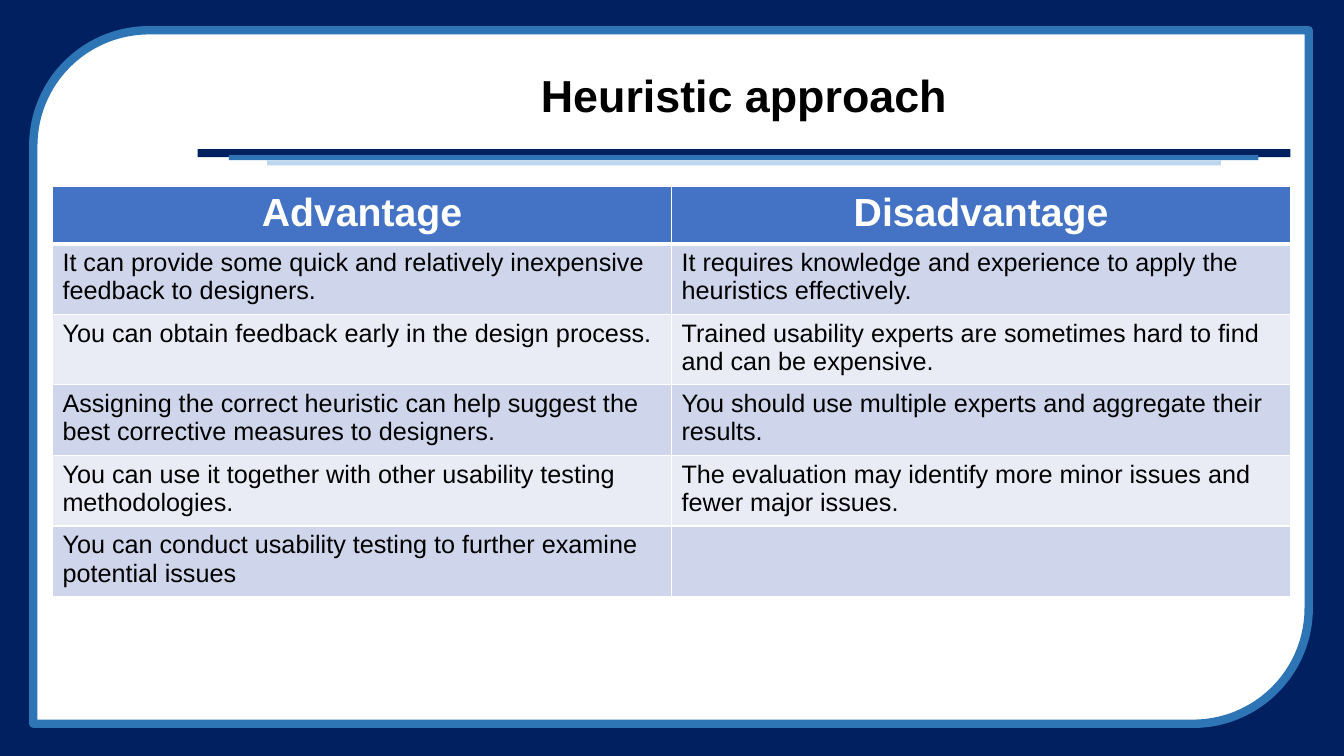
from typing import NamedTuple

from lxml import etree
from pptx import Presentation
from pptx import util as u
from pptx.dml.color import RGBColor
from pptx.enum import shapes, text
from pptx.oxml.ns import qn

NAVY, BLUE, PALE, WHITE, BLACK = "002060", "2E75B6", "BDD7EE", "FFFFFF", "000000"
HEADER_FILL, BANDS = "4472C4", ("CFD5EA", "E9EBF5")
HEADER_HEIGHT, ROW_HEIGHT, COLUMN_WIDTH = 0.53, 0.66, 6.14


class Panel(NamedTuple):
    left: float
    top: float
    width: float
    height: float
    fill: str
    kind: shapes.MSO_SHAPE = shapes.MSO_SHAPE.RECTANGLE
    line: str = ""
    rotation: int = 0


PANELS = [
    Panel(0, 0, 13.33, 7.5, NAVY),
    Panel(0.33, 0.3, 12.65, 6.88, WHITE, shapes.MSO_SHAPE.ROUND_2_DIAG_RECTANGLE, BLUE, 180),
    # Stripes under the title
    Panel(1.96, 1.48, 10.84, 0.08, NAVY),
    Panel(2.27, 1.54, 10.21, 0.05, BLUE),
    Panel(2.65, 1.59, 9.46, 0.05, PALE),
]

ROWS = [
    ("Advantage", "Disadvantage"),
    ("It can provide some quick and relatively inexpensive feedback to designers.",
     "It requires knowledge and experience to apply the heuristics effectively."),
    ("You can obtain feedback early in the design process.",
     "Trained usability experts are sometimes hard to find and can be expensive."),
    ("Assigning the correct heuristic can help suggest the best corrective measures to designers.",
     "You should use multiple experts and aggregate their results."),
    ("You can use it together with other usability testing methodologies.",
     "The evaluation may identify more minor issues and fewer major issues."),
    ("You can conduct usability testing to further examine potential issues", ""),
]

TITLE_FORMAT = {"name": "Arial", "size": u.Pt(32), "bold": True}
HEADER_FORMAT = {"name": "Arial", "size": u.Pt(28), "bold": True}
BODY_FORMAT = {"name": "Arial", "size": u.Pt(18), "bold": False}


def color(value: str) -> RGBColor:
    return RGBColor.from_string(value)


def draw_panel(page, panel: Panel) -> None:
    shape = page.shapes.add_shape(
        panel.kind, *map(u.Inches, (panel.left, panel.top, panel.width, panel.height)))
    shape.shadow.inherit = False
    shape.rotation = panel.rotation
    shape.fill.solid()
    shape.fill.fore_color.rgb = color(panel.fill)
    if panel.line:
        shape.line.color.rgb = color(panel.line)
        shape.line.width = u.Pt(6)
    else:
        shape.line.fill.background()


def write(para, words: str, formats: dict, ink: str, centered: bool) -> None:
    para.alignment = text.PP_ALIGN.CENTER if centered else text.PP_ALIGN.LEFT
    if not words:
        return
    span = para.add_run()
    span.text = words
    for name, value in formats.items():
        setattr(span.font, name, value)
    span.font.color.rgb = color(ink)


def add_borders(cell, row: int) -> None:
    widths = {"lnL": 1, "lnR": 1, "lnT": 3 if row == 1 else 1, "lnB": 3 if row == 0 else 1}
    properties = cell._tc.get_or_add_tcPr()
    for side, width in widths.items():
        line = etree.SubElement(properties, qn(f"a:{side}"), w=str(u.Pt(width)))
        fill = etree.SubElement(line, qn("a:solidFill"))
        etree.SubElement(fill, qn("a:srgbClr"), val=WHITE)


def draw_title(page) -> None:
    box = page.shapes.add_textbox(*map(u.Inches, (1.96, 0.49, 10.84, 0.97)))
    frame = box.text_frame
    frame.word_wrap = True
    frame.vertical_anchor = text.MSO_ANCHOR.MIDDLE
    para = frame.paragraphs[0]
    para.line_spacing = 0.9
    write(para, "Heuristic approach", TITLE_FORMAT, BLACK, True)


def draw_table(page) -> None:
    height = HEADER_HEIGHT + ROW_HEIGHT * (len(ROWS) - 1)
    table = page.shapes.add_table(
        len(ROWS), 2, *map(u.Inches, (0.52, 1.85, 2 * COLUMN_WIDTH, height))).table
    for column in table.columns:
        column.width = u.Inches(COLUMN_WIDTH)
    for row, entries in enumerate(ROWS):
        header = row == 0
        table.rows[row].height = u.Inches(HEADER_HEIGHT if header else ROW_HEIGHT)
        for column, words in enumerate(entries):
            cell = table.cell(row, column)
            add_borders(cell, row)
            cell.fill.solid()
            cell.fill.fore_color.rgb = color(HEADER_FILL if header else BANDS[(row - 1) % 2])
            write(cell.text_frame.paragraphs[0], words,
                  HEADER_FORMAT if header else BODY_FORMAT,
                  WHITE if header else BLACK, header)


def main() -> None:
    deck = Presentation()
    deck.slide_width, deck.slide_height = u.Inches(13.33), u.Inches(7.5)
    page = deck.slides.add_slide(deck.slide_layouts[6])
    # Frame and stripes
    for panel in PANELS:
        draw_panel(page, panel)
    # Content
    draw_title(page)
    draw_table(page)
    deck.save("out.pptx")


if __name__ == "__main__":
    main()
